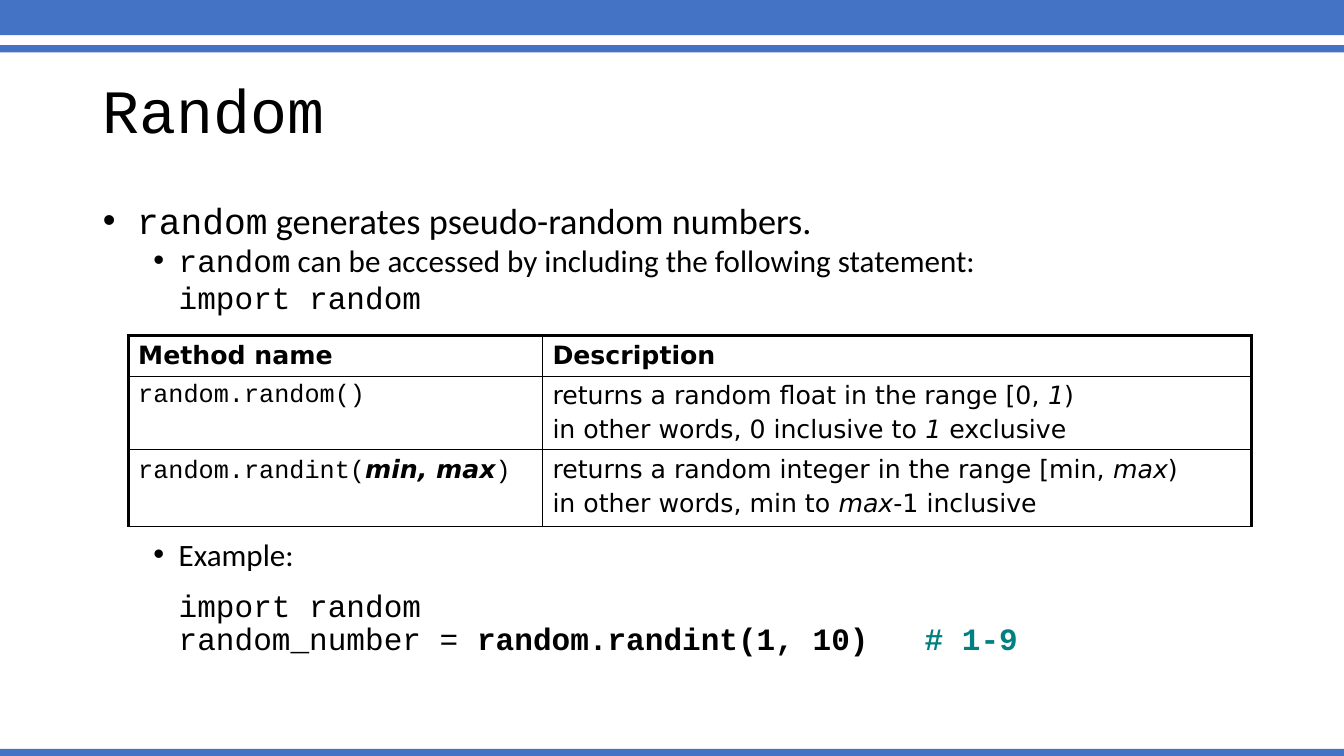
from dataclasses import dataclass
from typing import Any, Optional

import pptx
import pptx.dml.color
import pptx.enum.shapes
import pptx.enum.text
import pptx.oxml
import pptx.oxml.ns
import pptx.util

Cm = pptx.util.Cm
Pt = pptx.util.Pt


@dataclass(frozen=True)
class Theme:
    accent: str = "4472C4"
    text: str = "000000"
    comment: str = "008080"
    sans: str = "Calibri"
    code: str = "Courier New"
    table: str = "DejaVu Sans"
    title_size: float = 44
    first_level_size: float = 25.9
    second_level_size: float = 22.2
    table_size: float = 18
    thick_border: float = 2.25
    thin_border: float = 1


THEME = Theme()


@dataclass(frozen=True)
class Span:
    text: str
    font: str
    bold: bool = False
    italic: bool = False
    color: str = THEME.text


@dataclass(frozen=True)
class Line:
    spans: list[Span]
    size: float = THEME.table_size
    level: int = 0
    spacing: float = 1.0
    before: float = 3.6


@dataclass(frozen=True)
class ListItem:
    line: Line
    margin: float
    hanging: float = 0
    bullet: Optional[str] = None


@dataclass(frozen=True)
class Bar:
    top: float
    height: float


def code(text: str, **style: Any) -> Span:
    return Span(text, THEME.code, **style)


def sans(text: str) -> Span:
    return Span(text, THEME.sans)


def cell_text(text: str, **style: Any) -> Span:
    return Span(text, THEME.table, **style)


def second_level(spans: list[Span], bullet: Optional[str] = None,
                 spacing: float = 0.8, before: float = 5) -> ListItem:
    line = Line(spans, THEME.second_level_size, 1, spacing, before)
    return ListItem(line, 1.91, 0.64 if bullet else 0, bullet)


SLIDE_WIDTH, SLIDE_HEIGHT = 33.87, 19.05
BARS = [Bar(0, 0.89), Bar(1.14, 0.18), Bar(18.87, 0.18)]
TITLE = Line([code("Random")], THEME.title_size, spacing=0.9, before=0)

# The space before "Example:" leaves room for the table.
BODY = [
    ListItem(Line([code("random"), sans(" generates pseudo-random numbers.")],
                  THEME.first_level_size, 0, 0.8, 10), 0.86, 0.86, "•"),
    second_level([code("random"),
                  sans(" can be accessed by including the following statement:")], "•"),
    second_level([code("import random")]),
    second_level([sans("Example:")], "•", before=162.5),
    second_level([code("import random")], spacing=0.7, before=17),
    second_level([code("random_number = "),
                  code("random.randint(1, 10)   ", bold=True),
                  code("# 1-9", bold=True, color=THEME.comment)], spacing=0.7),
]

COLUMN_WIDTHS = [10.44, 17.86]
ROW_HEIGHTS = [1.02, 1.85, 1.93]
METHODS = [
    [[Line([cell_text("Method name", bold=True)])],
     [Line([cell_text("Description", bold=True)])]],
    [[Line([code("random.random()")])],
     [Line([cell_text("returns a random float in the range [0, "),
            cell_text("1", italic=True), cell_text(")")]),
      Line([cell_text("in other words, 0 inclusive to "),
            cell_text("1 ", italic=True), cell_text("exclusive")])]],
    [[Line([code("random.randint("),
            cell_text("min, max", bold=True, italic=True), code(")")])],
     [Line([cell_text("returns a random integer in the range [min, "),
            cell_text("max", italic=True), cell_text(")")]),
      Line([cell_text("in other words, min to "),
            cell_text("max", italic=True), cell_text("-1 inclusive")])]],
]


def rgb(color: str) -> pptx.dml.color.RGBColor:
    return pptx.dml.color.RGBColor.from_string(color)


def write_lines(text_frame: Any, lines: list[Line]) -> None:
    text_frame.text = "\n".join("" for _ in lines)
    for paragraph, line in zip(text_frame.paragraphs, lines):
        paragraph.level = line.level
        paragraph.alignment = pptx.enum.text.PP_ALIGN.LEFT
        paragraph.line_spacing = line.spacing
        paragraph.space_before = Pt(line.before)
        paragraph.space_after = Pt(0)
        for span in line.spans:
            run = paragraph.add_run()
            run.text = span.text
            run.font.name = span.font
            run.font.size = Pt(line.size)
            run.font.bold = span.bold
            run.font.italic = span.italic
            run.font.color.rgb = rgb(span.color)


def set_bullet(paragraph: Any, item: ListItem) -> None:
    properties = paragraph._p.get_or_add_pPr()
    properties.set("marL", str(Cm(item.margin)))
    properties.set("indent", str(-Cm(item.hanging)))
    namespace = pptx.oxml.ns.nsdecls("a")
    if item.bullet:
        properties.append(pptx.oxml.parse_xml(f'<a:buFont {namespace} typeface="Arial"/>'))
        properties.append(pptx.oxml.parse_xml(f'<a:buChar {namespace} char="{item.bullet}"/>'))
    else:
        properties.append(pptx.oxml.parse_xml(f"<a:buNone {namespace}/>"))


def set_border(cell: Any, side: str, width: float) -> None:
    cell._tc.get_or_add_tcPr().append(pptx.oxml.parse_xml(
        f'<a:ln{side} {pptx.oxml.ns.nsdecls("a")} w="{Pt(width)}">'
        f'<a:solidFill><a:srgbClr val="{THEME.text}"/></a:solidFill></a:ln{side}>'))


def place(shape: Any, left: float, top: float, width: float, height: float) -> None:
    shape.left, shape.top = Cm(left), Cm(top)
    shape.width, shape.height = Cm(width), Cm(height)


def add_bar(slide: Any, bar: Bar) -> None:
    shape = slide.shapes.add_shape(
        pptx.enum.shapes.MSO_SHAPE.RECTANGLE,
        Cm(0), Cm(bar.top), Cm(SLIDE_WIDTH), Cm(bar.height))
    shape.shadow.inherit = False
    shape.fill.solid()
    shape.fill.fore_color.rgb = rgb(THEME.accent)
    shape.line.fill.background()


def add_method_table(slide: Any) -> None:
    table = slide.shapes.add_table(
        len(ROW_HEIGHTS), len(COLUMN_WIDTHS), Cm(3.23), Cm(8.46),
        Cm(sum(COLUMN_WIDTHS)), Cm(sum(ROW_HEIGHTS))).table
    table.first_row = table.horz_banding = False
    for column, width in zip(table.columns, COLUMN_WIDTHS):
        column.width = Cm(width)
    for row, height in zip(table.rows, ROW_HEIGHTS):
        row.height = Cm(height)
    last_column = len(COLUMN_WIDTHS) - 1
    for row_index, row_lines in enumerate(METHODS):
        for column_index, lines in enumerate(row_lines):
            cell = table.cell(row_index, column_index)
            write_lines(cell.text_frame, lines)
            outer_sides = {"L": column_index == 0, "R": column_index == last_column,
                           "T": row_index == 0, "B": False}
            for side, is_outer in outer_sides.items():
                set_border(cell, side, THEME.thick_border if is_outer else THEME.thin_border)
            cell.fill.background()


def main() -> None:
    presentation = pptx.Presentation()
    presentation.slide_width, presentation.slide_height = Cm(SLIDE_WIDTH), Cm(SLIDE_HEIGHT)
    slide = presentation.slides.add_slide(presentation.slide_layouts[1])
    for bar in BARS:
        add_bar(slide, bar)

    title, body = slide.shapes.title, slide.placeholders[1]
    place(title, 2.34, 1.02, 29.21, 3.68)
    place(body, 2.34, 5.08, 29.21, 12.09)
    for placeholder in (title, body):
        placeholder.text_frame.auto_size = pptx.enum.text.MSO_AUTO_SIZE.NONE
    title.text_frame.vertical_anchor = pptx.enum.text.MSO_ANCHOR.MIDDLE
    write_lines(title.text_frame, [TITLE])
    write_lines(body.text_frame, [item.line for item in BODY])
    for paragraph, item in zip(body.text_frame.paragraphs, BODY):
        set_bullet(paragraph, item)

    add_method_table(slide)
    presentation.save("out.pptx")


if __name__ == "__main__":
    main()
